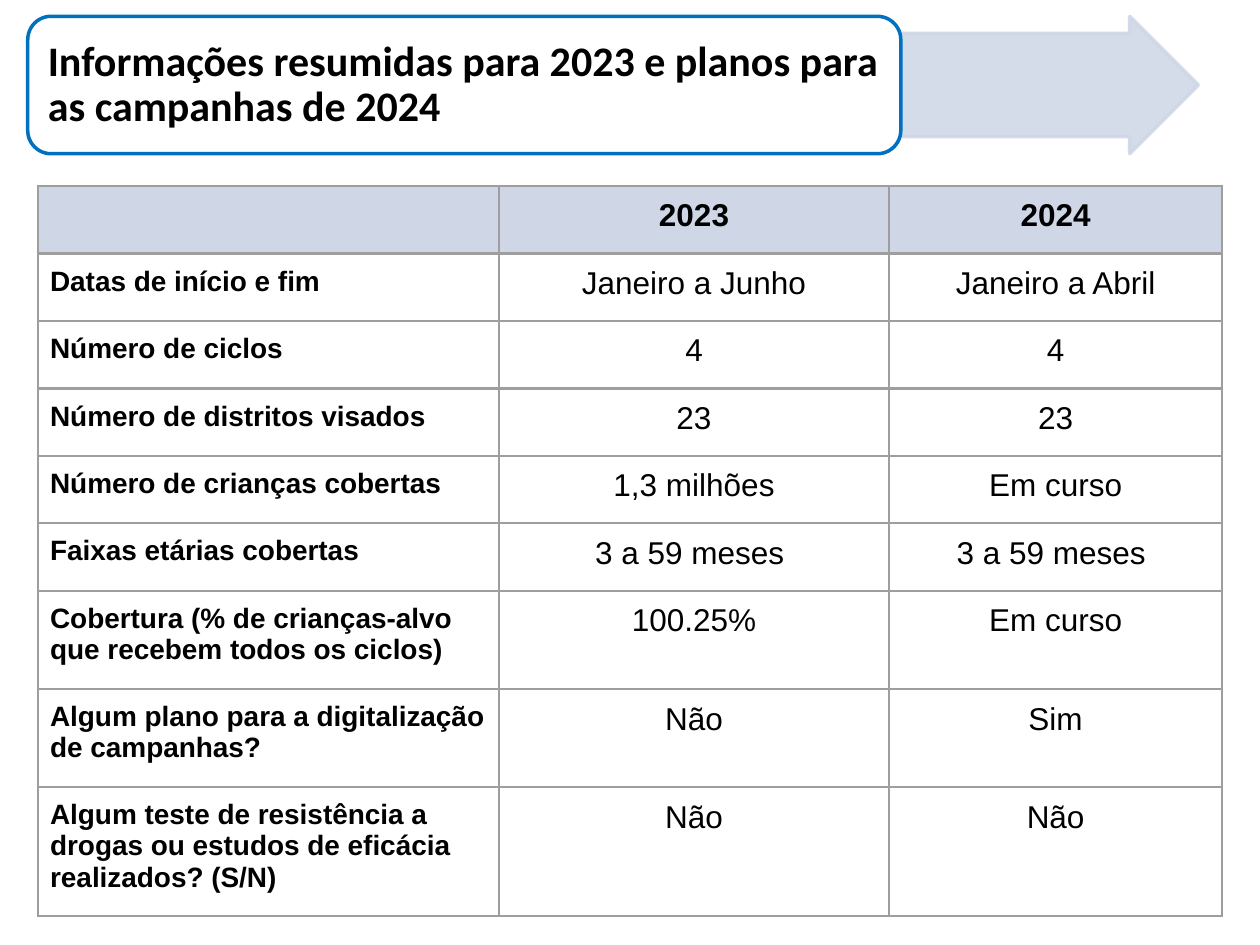
"""Build the slide that compares the 2023 campaign with the plans for 2024."""
from lxml.etree import SubElement
from pptx import Presentation
from pptx.dml.color import RGBColor
from pptx.enum.shapes import MSO_SHAPE as Shape
from pptx.enum.text import MSO_ANCHOR as Anchor, MSO_AUTO_SIZE as AutoSize, PP_ALIGN as Align
from pptx.oxml.ns import qn
from pptx.util import Cm, Pt

COLORS = {
    "pale": "CFD7E7",
    "accent": "0070C0",
    "white": "FFFFFF",
    "text": "000000",
    "border": "9E9E9E",
}
TITLE = "Informações resumidas para 2023 e planos para as campanhas de 2024"
COLUMN_WIDTHS = [9.3, 7.86, 6.72]
ROW_HEIGHTS = [1.36] * 6 + [1.98] * 2 + [2.6]
CAMPAIGN_ROWS = [
    ("", "2023", "2024"),
    ("Datas de início e fim", "Janeiro a Junho", "Janeiro a Abril"),
    ("Número de ciclos", "4", "4"),
    ("Número de distritos visados", "23", "23"),
    ("Número de crianças cobertas", "1,3 milhões", "Em curso"),
    ("Faixas etárias cobertas", "3 a 59 meses ", "3 a 59 meses "),
    ("Cobertura (% de crianças-alvo que recebem todos os ciclos)", "100.25%", "Em curso"),
    ("Algum plano para a digitalização de campanhas?", "Não", "Sim"),
    ("Algum teste de resistência a drogas ou estudos de eficácia realizados? (S/N)", "Não", "Não"),
]


def color(name):
    """Return the palette colour of that name."""
    return RGBColor.from_string(COLORS[name])


def add_run(paragraph, text, font_name, size, bold):
    """Add one formatted run to a paragraph."""
    run = paragraph.add_run()
    run.text = text
    run.font.name = font_name
    run.font.size = Pt(size)
    run.font.bold = bold
    run.font.color.rgb = color("text")


def set_alpha(fill_parent, percent):
    """Set the opacity of the solid fill held by an XML element."""
    tint = fill_parent.find(qn("a:solidFill"))[0]
    SubElement(tint, qn("a:alpha"), val=str(percent * 1000))


def add_banner_shape(slide, preset, box, adjustments, fill, line, opacity=100):
    """Add a filled and outlined banner shape."""
    banner = slide.shapes.add_shape(preset, *map(Cm, box))
    banner.shadow.inherit = False
    for index, value in enumerate(adjustments):
        banner.adjustments[index] = value
    banner.fill.solid()
    banner.fill.fore_color.rgb = color(fill)
    banner.line.color.rgb = color(line)
    banner.line.width = Pt(2)
    if opacity < 100:
        properties = banner.element.spPr
        set_alpha(properties, opacity)
        set_alpha(properties.find(qn("a:ln")), opacity)


def place_title(slide):
    """Format the title placeholder and bring it in front of the banner."""
    title = slide.shapes.title
    title.left, title.top, title.width, title.height = map(Cm, (0.71, 0.48, 17.32, 2.49))
    slide.shapes.element.append(title.element)
    frame = title.text_frame
    frame.word_wrap = True
    frame.auto_size = AutoSize.NONE
    frame.vertical_anchor = Anchor.MIDDLE
    heading = frame.paragraphs[0]
    heading.alignment = Align.LEFT
    heading.line_spacing = 0.9
    add_run(heading, TITLE, "Calibri", 24, True)


def set_borders(cell):
    """Draw the four borders of a table cell."""
    properties = cell._tc.get_or_add_tcPr()
    for position, side in enumerate(("a:lnL", "a:lnR", "a:lnT", "a:lnB")):
        border = SubElement(properties, qn(side), w=str(Pt(1.5)))
        properties.insert(position, border)
        stroke = SubElement(border, qn("a:solidFill"))
        SubElement(stroke, qn("a:srgbClr"), val=COLORS["border"])


def format_cell(cell, text, is_header, is_label):
    """Fill, outline and write one table cell."""
    cell.margin_left = cell.margin_right = cell.margin_top = cell.margin_bottom = Cm(0.25)
    if is_header:
        cell.fill.solid()
        cell.fill.fore_color.rgb = color("pale")
    else:
        cell.fill.background()
    set_borders(cell)
    if text:
        paragraph = cell.text_frame.paragraphs[0]
        paragraph.alignment = Align.LEFT if is_label else Align.CENTER
        add_run(paragraph, text, "Arial", 16 if is_label else 18, is_header or is_label)


def add_campaign_table(slide):
    """Add the table of campaign facts by year."""
    frame = slide.shapes.add_table(
        len(CAMPAIGN_ROWS), len(COLUMN_WIDTHS),
        Cm(0.76), Cm(3.75), Cm(sum(COLUMN_WIDTHS)), Cm(sum(ROW_HEIGHTS)),
    )
    table = frame.table
    table.first_row = table.horz_banding = False
    for column, width in zip(table.columns, COLUMN_WIDTHS):
        column.width = Cm(width)
    for row_index, (row, height) in enumerate(zip(table.rows, ROW_HEIGHTS)):
        row.height = Cm(height)
        for column_index, text in enumerate(CAMPAIGN_ROWS[row_index]):
            format_cell(row.cells[column_index], text, row_index == 0, column_index == 0)


def main():
    """Build and save the presentation."""
    presentation = Presentation()
    presentation.slide_width, presentation.slide_height = Cm(25.4), Cm(19.05)
    slide = presentation.slides.add_slide(presentation.slide_layouts[5])
    add_banner_shape(slide, Shape.RIGHT_ARROW, (18.16, 0.33, 6, 2.77), (0.75, 0.5),
                     "pale", "pale", opacity=89)
    add_banner_shape(slide, Shape.ROUNDED_RECTANGLE, (0.56, 0.33, 17.6, 2.77), (0.17,),
                     "white", "accent")
    place_title(slide)
    add_campaign_table(slide)
    presentation.save("out.pptx")


if __name__ == "__main__":
    main()
